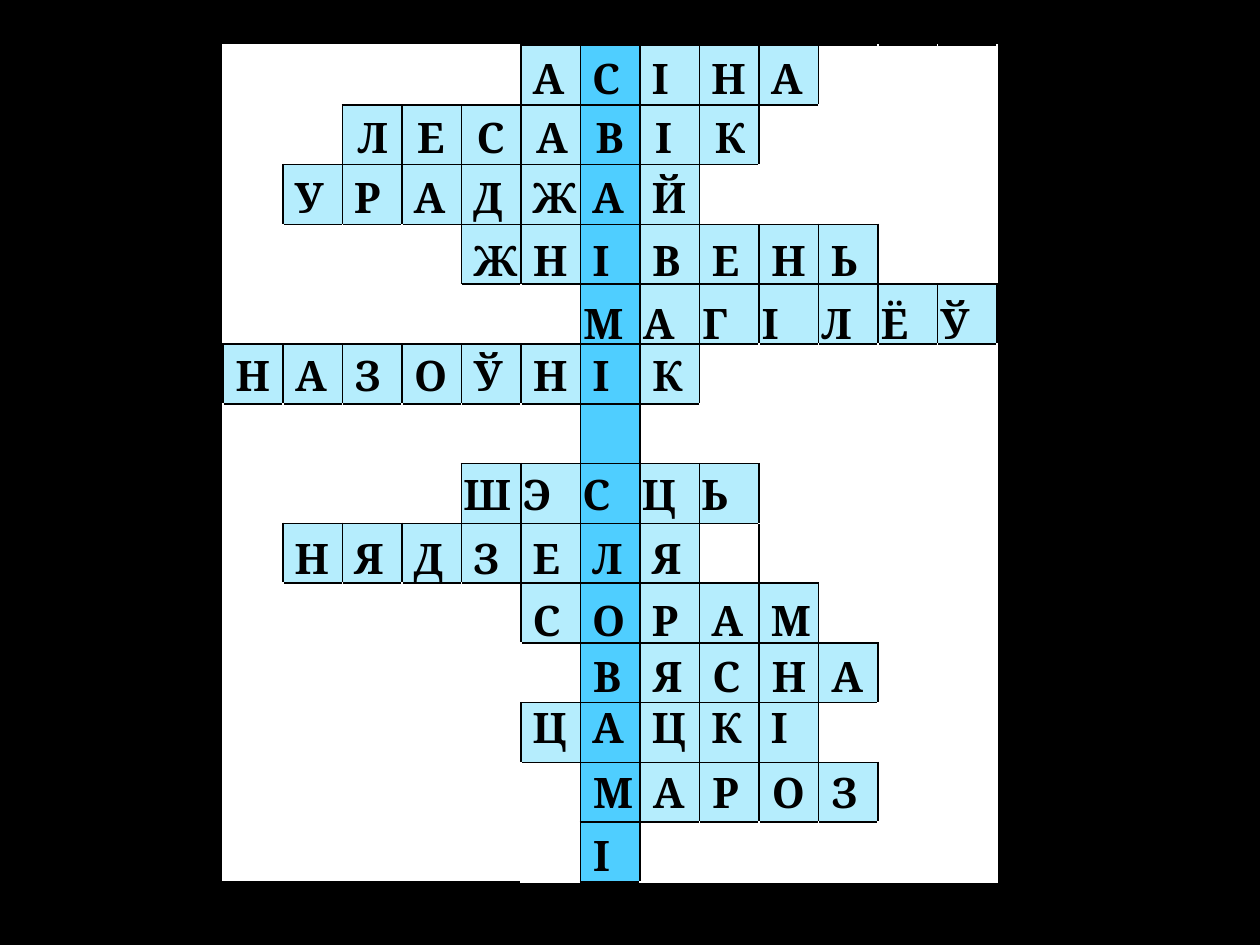
from dataclasses import dataclass

from lxml import etree
from pptx import Presentation
from pptx.dml.color import RGBColor
from pptx.enum.text import MSO_AUTO_SIZE
from pptx.oxml.ns import qn
from pptx.util import Cm, Pt

FIT_SHAPE = MSO_AUTO_SIZE.SHAPE_TO_FIT_TEXT


@dataclass(frozen=True)
class Theme:
    ink: str = "000000"
    paper: str = "FFFFFF"
    answer: str = "B5EDFD"
    key: str = "4FCEFF"
    font: str = "Cambria"
    size: int = 24
    border: int = 1


THEME = Theme()

# Grid measures, in centimetres
GRID_LEFT, GRID_TOP = 4.5, 0.91
COLUMNS, ROWS = 13, 14
PITCH = 1.2
ROW_HEIGHT = 16.87 / ROWS
INSET = 0.25
BOX_HEIGHT = 1.28
KEY_COLUMN = 6

# Answer, first grid column, then left, top and width of its box; one per row
ANSWERS = [
    ("АСІНА", 5, 10.49, 0.94, 7.19),
    ("ЛЕСАВІК", 2, 6.96, 2.13, 9.96),
    ("УРАДЖАЙ", 1, 5.69, 3.33, 8.99),
    ("ЖНІВЕНЬ", 4, 9.3, 4.6, 8.99),
    ("МАГІЛЁЎ", 6, 11.51, 5.87, 8.41),
    ("НАЗОЎНІК", 0, 4.5, 6.93, 9.6),
    None,
    ("ШЭСЦЬ", 4, 9.09, 9.32, 6.81),
    ("НЯДЗЕЛЯ", 1, 5.69, 10.62, 8.41),
    ("СОРАМ", 5, 10.49, 11.86, 6.27),
    ("ВЯСНА", 6, 11.71, 12.98, 5.99),
    ("ЦАЦКІ", 5, 10.49, 14.02, 6.27),
    ("МАРОЗ", 6, 11.71, 15.32, 8),
    ("І", 6, 11.71, 16.59, 1.2),
]

# Further places whose edges are black: a blank cell and outer edge pieces
EXTRA_OUTLINES = (
    {(8, 8)}
    | {(-1, column) for column in range(10, COLUMNS)}
    | {(ROWS, column) for column in range(5)}
)


def answer_cells():
    """Return the (row, column) places that belong to the crossword."""
    places = {(row, KEY_COLUMN) for row in range(ROWS)}
    for row, answer in enumerate(ANSWERS):
        if answer:
            word, first = answer[:2]
            places |= {(row, first + step) for step in range(len(word))}
    return places


def set_border(cell, side, color):
    properties = cell._tc.get_or_add_tcPr()
    line = etree.SubElement(properties, qn(f"a:ln{side}"),
                            w=str(Pt(THEME.border)))
    fill = etree.SubElement(line, qn("a:solidFill"))
    etree.SubElement(fill, qn("a:srgbClr"), val=color)


def style_cell(cell, place, filled, outlined):
    row, column = place
    neighbours = {
        "L": (row, column - 1),
        "R": (row, column + 1),
        "T": (row - 1, column),
        "B": (row + 1, column),
    }
    for side, neighbour in neighbours.items():
        is_black = place in outlined or neighbour in outlined
        set_border(cell, side, THEME.ink if is_black else THEME.paper)
    if column == KEY_COLUMN:
        color = THEME.key
    else:
        color = THEME.answer if place in filled else THEME.paper
    cell.fill.solid()
    cell.fill.fore_color.rgb = RGBColor.from_string(color)


def add_grid(page):
    frame = page.shapes.add_table(
        ROWS, COLUMNS, Cm(GRID_LEFT), Cm(GRID_TOP),
        Cm(PITCH * COLUMNS), Cm(ROW_HEIGHT * ROWS))
    table = frame.table
    table.first_row = False
    table.horz_banding = False
    for column in table.columns:
        column.width = Cm(PITCH)
    filled = answer_cells()
    outlined = filled | EXTRA_OUTLINES
    for row_index, row in enumerate(table.rows):
        row.height = Cm(ROW_HEIGHT)
        for column_index, cell in enumerate(row.cells):
            style_cell(cell, (row_index, column_index), filled, outlined)


def set_tab_stops(para, count):
    """Place one left tab stop per grid column."""
    stops = etree.SubElement(para._p.get_or_add_pPr(), qn("a:tabLst"))
    for step in range(1, count + 1):
        etree.SubElement(stops, qn("a:tab"), pos=str(Cm(PITCH * step)),
                         algn="l")


def add_answer(page, word, left, top, width):
    box = page.shapes.add_textbox(Cm(left), Cm(top), Cm(width),
                                  Cm(BOX_HEIGHT))
    frame = box.text_frame
    frame.word_wrap = True
    frame.auto_size = FIT_SHAPE
    frame.margin_left, frame.margin_right = Cm(INSET), 0
    para = frame.paragraphs[0]
    para.text = "\t".join(word)
    para.font.name = THEME.font
    para.font.size = Pt(THEME.size)
    para.font.bold = True
    para.font.color.rgb = RGBColor.from_string(THEME.ink)
    # Tab stops come before the default run properties in the schema
    set_tab_stops(para, len(word) - 1)
    properties = para._p.get_or_add_pPr()
    properties.append(properties.find(qn("a:defRPr")))


def main():
    deck = Presentation()
    deck.slide_width, deck.slide_height = Cm(25.4), Cm(19.05)
    page = deck.slides.add_slide(deck.slide_layouts[6])
    page.background.fill.solid()
    page.background.fill.fore_color.rgb = RGBColor.from_string(THEME.ink)

    # Crossword grid
    add_grid(page)

    # Answers, one letter per column
    for answer in filter(None, ANSWERS):
        word, _, left, top, width = answer
        add_answer(page, word, left, top, width)

    deck.save("out.pptx")


if __name__ == "__main__":
    main()
